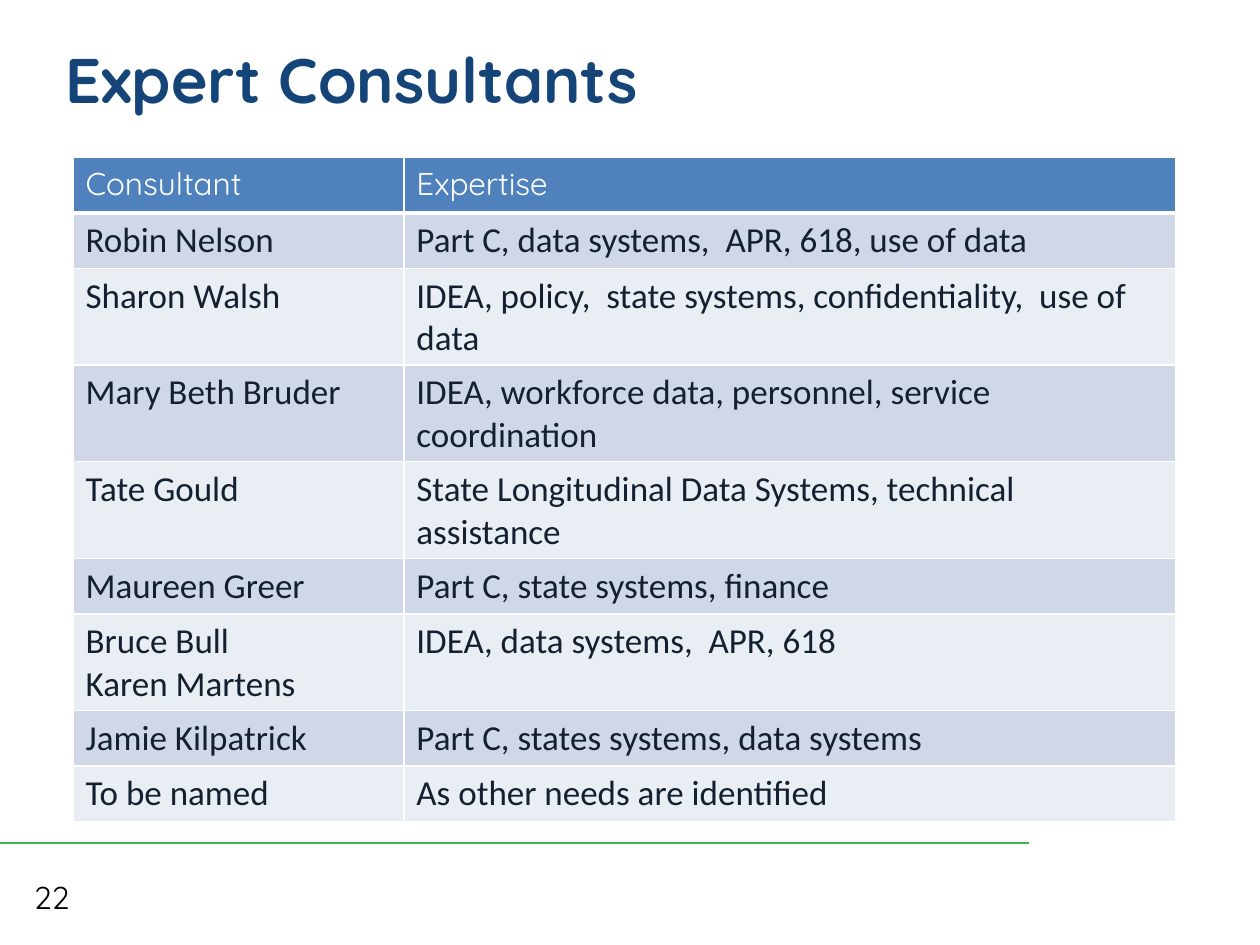
from lxml import etree
from pptx import Presentation
from pptx.dml.color import RGBColor
from pptx.enum.shapes import MSO_CONNECTOR
from pptx.enum.text import MSO_ANCHOR
from pptx.oxml.ns import qn
from pptx.util import Inches, Pt

STRAIGHT = MSO_CONNECTOR.STRAIGHT
TOP, MIDDLE = MSO_ANCHOR.TOP, MSO_ANCHOR.MIDDLE
COLORS = {
    "title": "154578",
    "header": "4F81BD",
    "odd": "D0D8E8",
    "even": "E9EDF4",
    "white": "FFFFFF",
    "body": "122030",
    "number": "000000",
    "rule": "39B54A",
}
HEADING_FONT, BODY_FONT = "Quicksand", "Calibri"
COLUMN_SHARES = (0.3, 0.7)
LINE_HEIGHT, CELL_PADDING = 0.32, 0.12
HEADINGS = ("Consultant", "Expertise")
CONSULTANTS = [
    ("Robin Nelson", "Part C, data systems,  APR, 618, use of data", 1),
    ("Sharon Walsh", "IDEA, policy,  state systems, confidentiality,  use of data", 2),
    ("Mary Beth Bruder", "IDEA, workforce data, personnel, service coordination", 2),
    ("Tate Gould", "State Longitudinal Data Systems, technical assistance", 2),
    ("Maureen Greer", "Part C, state systems, finance", 1),
    ("Bruce Bull\nKaren Martens", "IDEA, data systems,  APR, 618", 2),
    ("Jamie Kilpatrick", "Part C, states systems, data systems", 1),
    ("To be named", "As other needs are identified", 1),
]


def color(name):
    return RGBColor.from_string(COLORS[name])


def write(frame, text, size, font, color_name, bold=False):
    for index, line in enumerate(text.split("\n")):
        paragraph = frame.add_paragraph() if index else frame.paragraphs[0]
        run = paragraph.add_run()
        run.text = line
        run.font.size = Pt(size)
        run.font.name = font
        run.font.bold = bold
        run.font.color.rgb = color(color_name)


def add_label(slide, box, text, size, color_name, anchor=TOP, bold=False):
    shape = slide.shapes.add_textbox(*map(Inches, box))
    shape.text_frame.word_wrap = True
    shape.text_frame.vertical_anchor = anchor
    write(shape.text_frame, text, size, HEADING_FONT, color_name, bold)


def add_borders(cell, bottom_width):
    properties = cell._tc.get_or_add_tcPr()
    widths = {"a:lnL": 1, "a:lnR": 1, "a:lnT": 1, "a:lnB": bottom_width}
    for position, (tag, width) in enumerate(widths.items()):
        line = etree.Element(qn(tag), w=str(Pt(width)))
        fill = etree.SubElement(line, qn("a:solidFill"))
        etree.SubElement(fill, qn("a:srgbClr"), val=COLORS["white"])
        properties.insert(position, line)


def fill_cell(cell, text, fill_name, is_header):
    cell.fill.solid()
    cell.fill.fore_color.rgb = color(fill_name)
    add_borders(cell, 3 if is_header else 1)
    if is_header:
        write(cell.text_frame, text, 18, HEADING_FONT, "white")
    else:
        write(cell.text_frame, text, 20, BODY_FONT, "body")


def add_consultant_table(slide, box):
    rows = [(*HEADINGS, 1), *CONSULTANTS]
    shape = slide.shapes.add_table(len(rows), len(HEADINGS), *map(Inches, box))
    table = shape.table
    for column, share in zip(table.columns, COLUMN_SHARES):
        column.width = Inches(box[2] * share)
    for row_index, (*texts, line_count) in enumerate(rows):
        table.rows[row_index].height = Inches(CELL_PADDING + line_count * LINE_HEIGHT)
        is_header = row_index == 0
        fill_name = "header" if is_header else ("even", "odd")[row_index % 2]
        for column_index, text in enumerate(texts):
            fill_cell(table.cell(row_index, column_index), text, fill_name, is_header)


def add_footer(slide, box):
    left, top, width, height = box
    rule = slide.shapes.add_connector(
        STRAIGHT, *map(Inches, (left, top, left + width * 0.817, top))
    )
    rule.line.color.rgb = color("rule")
    rule.line.width = Pt(1.5)
    etree.SubElement(rule._element.spPr, qn("a:effectLst"))
    number_box = (left + 0.17, top + 0.23, width * 0.233, height / 2)
    add_label(slide, number_box, "22", 18, "number")


def main():
    presentation = Presentation()
    presentation.slide_width, presentation.slide_height = Inches(10), Inches(7.5)
    slide = presentation.slides.add_slide(presentation.slide_layouts[6])
    slide.background.fill.solid()
    slide.background.fill.fore_color.rgb = color("white")
    add_footer(slide, (0, 6.69, 10, 0.81))
    add_label(slide, (0.42, 0, 9, 1.25), "Expert Consultants", 36, "title", MIDDLE, True)
    add_consultant_table(slide, (0.58, 1.25, 8.75, 5.24))
    presentation.save("out.pptx")


if __name__ == "__main__":
    main()
